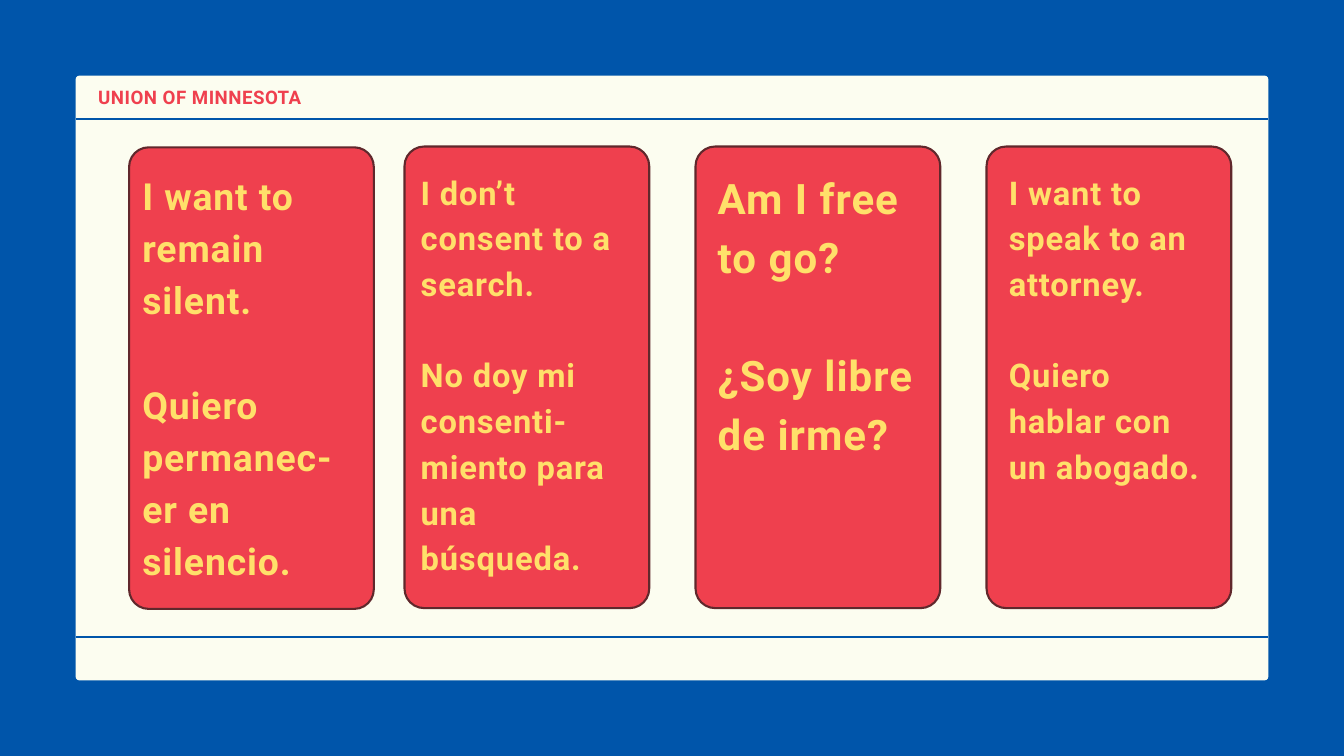
from pptx import Presentation
from pptx.dml.color import RGBColor
from pptx.enum.shapes import MSO_CONNECTOR, MSO_SHAPE
from pptx.oxml.ns import qn
from pptx.util import Cm, Pt
from lxml import etree

BLUE = RGBColor(0x00, 0x55, 0xAA)
CREAM = RGBColor(0xFC, 0xFD, 0xF0)
RED = RGBColor(0xEF, 0x40, 0x4E)
YELLOW = RGBColor(0xFF, 0xE0, 0x6A)
DARK = RGBColor(0x60, 0x28, 0x2C)


def add_rounded(left, top, width, height, corner, color):
    shape = slide.shapes.add_shape(
        MSO_SHAPE.ROUNDED_RECTANGLE, Cm(left), Cm(top), Cm(width), Cm(height))
    shape.adjustments[0] = corner
    shape.shadow.inherit = False
    shape.fill.solid()
    shape.fill.fore_color.rgb = color
    shape.line.fill.background()
    return shape


def add_text(box, paragraphs, size, leading, tracking, color):
    """Write bold paragraphs set one full line apart; tracking is in points."""
    frame = slide.shapes.add_textbox(*[Cm(length) for length in box]).text_frame
    frame.word_wrap = True
    for side in ("left", "top", "right", "bottom"):
        setattr(frame, f"margin_{side}", 0)
    for index, wording in enumerate(paragraphs):
        paragraph = frame.add_paragraph() if index else frame.paragraphs[0]
        paragraph.line_spacing = Pt(leading)
        if index:
            paragraph.space_before = Pt(leading)
        run = paragraph.add_run()
        run.text = wording
        for name, value in {"name": "Roboto", "size": Pt(size), "bold": True}.items():
            setattr(run.font, name, value)
        run.font.color.rgb = color
        run._r.get_or_add_rPr().set("spc", str(round(tracking * 100)))


prs = Presentation()
prs.slide_width, prs.slide_height = Cm(50.8), Cm(28.58)
slide = prs.slides.add_slide(prs.slide_layouts[6])
slide.background.fill.solid()
slide.background.fill.fore_color.rgb = BLUE

PANEL_LEFT, PANEL_WIDTH = 2.86, 45.08
add_rounded(PANEL_LEFT, 2.86, PANEL_WIDTH, 22.86, 0.006, CREAM)

for rule_y in (4.5, 24.08):
    rule = slide.shapes.add_connector(
        MSO_CONNECTOR.STRAIGHT, Cm(PANEL_LEFT), Cm(rule_y),
        Cm(PANEL_LEFT + PANEL_WIDTH), Cm(rule_y))
    rule.line.color.rgb = BLUE
    rule.line.width = Pt(2.25)
    etree.SubElement(rule._element.spPr, qn("a:effectLst"))

add_text((3.71, 3.38, 12, 0.81), ["UNION OF MINNESOTA"], 20, 20, 0.5, RED)

# card left, card top, text box, English, Spanish, size, leading, tracking
cards = [
    (4.88, 5.57, (5.38, 6.25, 8.23, 15.72), "I want to remain silent.",
     "Quiero permanec-er en silencio.", 40, 56, 1),
    (15.29, 5.54, (15.9, 6.27, 8.03, 15.54), "I don’t consent to a search.",
     "No doy mi consenti-miento para una búsqueda.", 35, 49, 0.9),
    (26.29, 5.54, (27.13, 6.22, 7.57, 15.42), "Am I free to go?",
     "¿Soy libre de irme?", 45, 63, 1.1),
    (37.29, 5.54, (38.13, 6.27, 7.54, 13.82), "I want to speak to an attorney.",
     "Quiero hablar con un abogado.", 35, 49, 0.9),
]
for left, top, text_box, english, spanish, size, leading, tracking in cards:
    card = add_rounded(left, top, 9.25, 17.45, 0.08, RED)
    card.line.color.rgb = DARK
    card.line.width = Pt(2.25)
    add_text(text_box, [english, spanish], size, leading, tracking, YELLOW)

prs.save("out.pptx")
